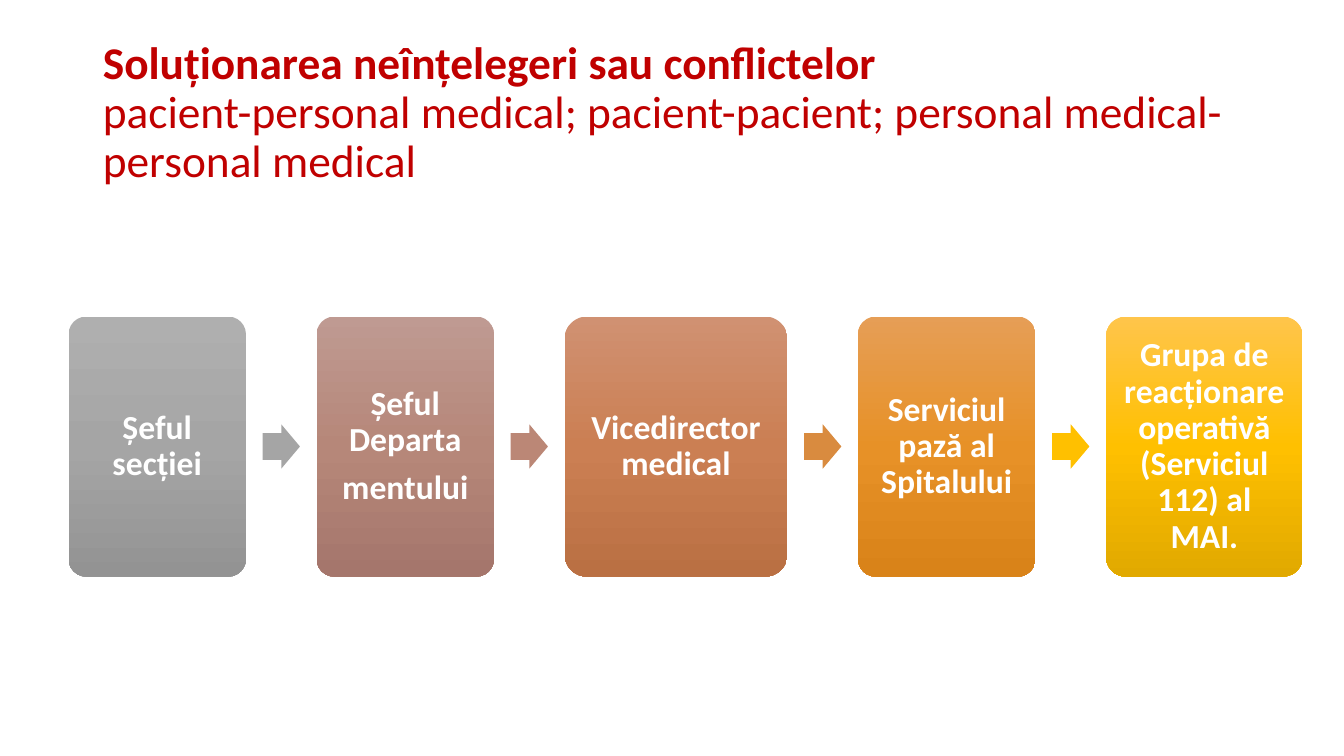
import pptx
import pptx.util
import pptx.dml.color
import pptx.enum.shapes
import pptx.enum.text
import pptx.oxml
import pptx.oxml.ns

# Content
TITLE = [
    ("Soluționarea neînțelegeri sau conflictelor", True),
    ("pacient-personal medical; pacient-pacient; personal medical-personal medical", False),
]
STEPS = [  # paragraphs, box width, colour key
    (["Șeful secției"], 1.76, "grey"),
    (["Șeful Departa", "mentului"], 1.76, "rose"),
    (["Vicedirector medical"], 2.21, "copper"),
    (["Serviciul pază al Spitalului"], 1.76, "orange"),
    (["Grupa de reacționare operativă (Serviciul 112) al MAI."], 1.95, "gold"),
]
COLORS = {"title": "C00000", "text": "FFFFFF"}
GRADIENTS = {  # top, middle, bottom
    "grey": ("AFAFAF", "A5A5A5", "939393"),
    "rose": ("BF9A92", "B68779", "A5766C"),
    "copper": ("D09172", "CB7F53", "BA7043"),
    "orange": ("E69E56", "E79127", "D98319"),
    "gold": ("FFC54B", "FFC000", "E1A900"),
}
ARROWS = ["A5A5A5", "BB8776", "D98B3F", "FFC000"]
FONT = "Calibri"

# Layout in inches
LEFT, TOP, BOX_H, GAP = 0.68, 3.14, 2.58, 0.7
ARROW_W, ARROW_H = 0.37, 0.44

Inches, Pt = pptx.util.Inches, pptx.util.Pt
SHAPE = pptx.enum.shapes.MSO_SHAPE
ALIGN = pptx.enum.text.PP_ALIGN
MIDDLE = pptx.enum.text.MSO_ANCHOR.MIDDLE


def rgb(color):
    return pptx.dml.color.RGBColor.from_string(color)


def add_run(p, text, size, color, bold):
    r = p.add_run()
    r.text = text
    r.font.name, r.font.size, r.font.bold = FONT, Pt(size), bold
    r.font.color.rgb = rgb(color)


def add_block(s, kind, x, y, w, h, adjustments):
    sp = s.shapes.add_shape(kind, Inches(x), Inches(y), Inches(w), Inches(h))
    for i, value in enumerate(adjustments):
        sp.adjustments[i] = value
    sp.shadow.inherit = False
    sp.line.fill.background()
    return sp


def set_gradient(sp, colors):
    sp.fill.gradient()
    sp.fill.gradient_angle = 270  # top to bottom
    stops = sp.fill._fill._gradFill.find(pptx.oxml.ns.qn("a:gsLst"))
    for stop in list(stops):
        stops.remove(stop)
    for i, color in enumerate(colors):
        stops.append(pptx.oxml.parse_xml(
            f'<a:gs {pptx.oxml.ns.nsdecls("a")} pos="{i * 50000}">'
            f'<a:srgbClr val="{color}"/></a:gs>'))


def add_title(s):
    sp = s.shapes.title
    sp.left, sp.top = Inches(0.92), Inches(0.4)
    sp.width, sp.height = Inches(11.5), Inches(1.45)
    tf = sp.text_frame
    tf.word_wrap, tf.vertical_anchor = True, MIDDLE
    tf.auto_size = pptx.enum.text.MSO_AUTO_SIZE.NONE
    p = tf.paragraphs[0]
    p.alignment, p.line_spacing = ALIGN.LEFT, 0.9
    for i, (text, bold) in enumerate(TITLE):
        if i:
            p.add_line_break()
        add_run(p, text, 32.4, COLORS["title"], bold)


def add_step(s, x, paragraphs, width, key):
    sp = add_block(s, SHAPE.ROUNDED_RECTANGLE, x, TOP, width, BOX_H, [0.1])
    set_gradient(sp, GRADIENTS[key])
    tf = sp.text_frame
    tf.word_wrap, tf.vertical_anchor = True, MIDDLE
    tf.margin_left = tf.margin_right = tf.margin_top = tf.margin_bottom = Inches(0.1)
    for i, text in enumerate(paragraphs):
        p = tf.add_paragraph() if i else tf.paragraphs[0]
        p.alignment, p.line_spacing, p.space_after = ALIGN.CENTER, 0.9, Pt(8.4)
        add_run(p, text, 24, COLORS["text"], True)


def main():
    prs = pptx.Presentation()
    prs.slide_width, prs.slide_height = Inches(13.33), Inches(7.5)
    s = prs.slides.add_slide(prs.slide_layouts[5])
    add_title(s)

    # Chain of boxes with an arrow centred in each gap
    x = LEFT
    for i, (paragraphs, width, key) in enumerate(STEPS):
        add_step(s, x, paragraphs, width, key)
        x += width
        if i < len(ARROWS):
            arrow = add_block(s, SHAPE.RIGHT_ARROW, x + (GAP - ARROW_W) / 2,
                              TOP + (BOX_H - ARROW_H) / 2, ARROW_W, ARROW_H, [0.6, 0.5])
            arrow.fill.solid()
            arrow.fill.fore_color.rgb = rgb(ARROWS[i])
        x += GAP
    prs.save("out.pptx")


if __name__ == "__main__":
    main()
